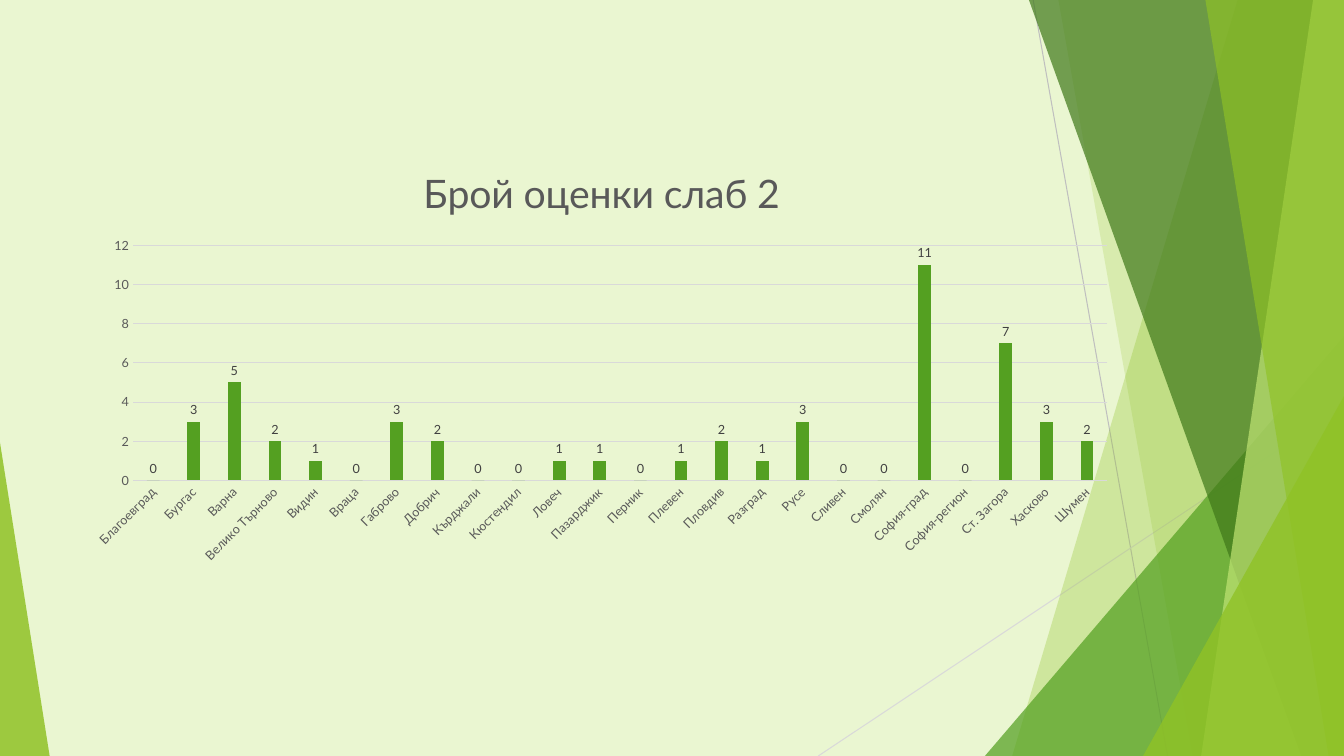
from dataclasses import dataclass

from lxml.etree import SubElement
from pptx import Presentation
from pptx.chart.data import CategoryChartData
from pptx.chart.chart import Chart
from pptx.dml.color import RGBColor
from pptx.enum.chart import XL_CHART_TYPE, XL_LABEL_POSITION, XL_TICK_MARK
from pptx.enum.shapes import MSO_CONNECTOR, MSO_SHAPE
from pptx.oxml.ns import qn
from pptx.shapes.autoshape import Shape
from pptx.slide import Slide
from pptx.text.text import Font
from pptx.util import Pt

WIDTH, HEIGHT = 960, 540


@dataclass(frozen=True)
class Theme:
    back: str = "EAF6D1"
    lime: str = "90C226"
    green: str = "54A021"
    forest: str = "3F7819"
    pale: str = "C0E474"
    rule: str = "BFBFBF"
    grid: str = "D9D9D9"
    text: str = "595959"
    label: str = "404040"
    face: str = "Lato"
    title: float = 28
    base: float = 10
    small: float = 9
    hair: float = 0.75


THEME = Theme()


@dataclass(frozen=True)
class Rule:
    start: tuple[float, float]
    end: tuple[float, float]
    color: str


@dataclass(frozen=True)
class Veil:
    """A band from a slanted left edge to the right side of the slide."""
    top: float
    foot: float
    color: str
    alpha: int


@dataclass(frozen=True)
class Wedge:
    """A right triangle standing on the foot of the slide."""
    left: float
    width: float
    height: float
    peak: float
    color: str
    alpha: int


RULES = [
    Rule((738, 0), (834, HEIGHT), THEME.rule),
    Rule((WIDTH, 290), (584.5, HEIGHT), THEME.grid),
]

PANES = [
    Veil(884, 723, THEME.lime, 30),
    Veil(756, 852, THEME.lime, 20),
    Wedge(703.5, 256.5, 300, 1, THEME.green, 72),
    Veil(735, 929.5, THEME.forest, 70),
    Veil(938, 858, THEME.pale, 70),
    Veil(861, 949, THEME.lime, 65),
    Wedge(816.5, 143.5, 257, 1, THEME.lime, 80),
    Wedge(0, 35.5, 224, 0, THEME.lime, 85),
]

GRADES = {
    "Благоевград": 0, "Бургас": 3, "Варна": 5, "Велико Търново": 2,
    "Видин": 1, "Враца": 0, "Габрово": 3, "Добрич": 2,
    "Кърджали": 0, "Кюстендил": 0, "Ловеч": 1, "Пазарджик": 1,
    "Перник": 0, "Плевен": 1, "Пловдив": 2, "Разград": 1,
    "Русе": 3, "Сливен": 0, "Смолян": 0, "София-град": 11,
    "София-регион": 0, "Ст. Загора": 7, "Хасково": 3, "Шумен": 2,
}


def rgb(code: str) -> RGBColor:
    return RGBColor.from_string(code)


def set_font(font: Font, size: float, color: str) -> None:
    font.name = THEME.face
    font.size = Pt(size)
    font.bold = False
    font.color.rgb = rgb(color)


def draw_rule(slide: Slide, rule: Rule) -> None:
    ends = [Pt(n) for n in (*rule.start, *rule.end)]
    line = slide.shapes.add_connector(MSO_CONNECTOR.STRAIGHT, *ends)
    line.line.color.rgb = rgb(rule.color)
    line.line.width = Pt(THEME.hair)
    SubElement(line._element.spPr, qn("a:effectLst"))


def draw_veil(slide: Slide, veil: Veil) -> Shape:
    pen = slide.shapes.build_freeform(Pt(veil.top), 0)
    rest = [(WIDTH, 0), (WIDTH, HEIGHT), (veil.foot, HEIGHT)]
    pen.add_line_segments([(Pt(x), Pt(y)) for x, y in rest], close=True)
    return pen.convert_to_shape()


def draw_wedge(slide: Slide, wedge: Wedge) -> Shape:
    shape = slide.shapes.add_shape(
        MSO_SHAPE.ISOSCELES_TRIANGLE, Pt(wedge.left),
        Pt(HEIGHT - wedge.height), Pt(wedge.width), Pt(wedge.height))
    shape.adjustments[0] = wedge.peak
    return shape


def draw_pane(slide: Slide, pane: Veil | Wedge) -> None:
    if isinstance(pane, Veil):
        shape = draw_veil(slide, pane)
    else:
        shape = draw_wedge(slide, pane)
    shape.shadow.inherit = False
    shape.line.fill.background()
    shape.fill.solid()
    shape.fill.fore_color.rgb = rgb(pane.color)
    tint = shape._element.spPr.find(f"{qn('a:solidFill')}/{qn('a:srgbClr')}")
    SubElement(tint, qn("a:alpha"), val=str(pane.alpha * 1000))


def style_axes(chart: Chart) -> None:
    names, scale = chart.category_axis, chart.value_axis
    for axis in (names, scale):
        axis.major_tick_mark = XL_TICK_MARK.NONE
        axis.minor_tick_mark = XL_TICK_MARK.NONE
        set_font(axis.tick_labels.font, THEME.small, THEME.text)
    names._element.txPr.bodyPr.set("rot", str(-45 * 60000))
    scale.minimum_scale, scale.maximum_scale, scale.major_unit = 0, 12, 2
    scale.has_major_gridlines = True
    scale.format.line.fill.background()
    for line in (names.format.line, scale.major_gridlines.format.line):
        line.color.rgb = rgb(THEME.grid)
        line.width = Pt(THEME.hair)


def style_bars(chart: Chart) -> None:
    plot = chart.plots[0]
    plot.gap_width, plot.overlap = 219, -27
    plot.vary_by_categories = False
    bars = plot.series[0]
    bars.invert_if_negative = False
    bars.format.fill.solid()
    bars.format.fill.fore_color.rgb = rgb(THEME.green)
    labels = bars.data_labels
    labels.show_value = True
    labels.position = XL_LABEL_POSITION.OUTSIDE_END
    set_font(labels.font, THEME.small, THEME.label)


def draw_chart(slide: Slide) -> None:
    data = CategoryChartData()
    data.categories = list(GRADES)
    data.add_series("Брой оценки слаб 2", list(GRADES.values()))
    box = [Pt(n) for n in (53.5, 103, 752.5, 305.5)]
    chart = slide.shapes.add_chart(
        XL_CHART_TYPE.COLUMN_CLUSTERED, *box, data).chart
    set_font(chart.font, THEME.base, THEME.text)
    chart.has_legend = False
    chart.has_title = True
    run = chart.chart_title.text_frame.paragraphs[0].add_run()
    run.text = "Брой оценки слаб 2"
    set_font(run.font, THEME.title, THEME.text)
    chart.chart_title.include_in_layout = False
    style_axes(chart)
    style_bars(chart)


def main() -> None:
    deck = Presentation()
    deck.slide_width, deck.slide_height = Pt(WIDTH), Pt(HEIGHT)
    slide = deck.slides.add_slide(deck.slide_layouts[6])
    slide.background.fill.solid()
    slide.background.fill.fore_color.rgb = rgb(THEME.back)
    for rule in RULES:
        draw_rule(slide, rule)
    for pane in PANES:
        draw_pane(slide, pane)
    draw_chart(slide)
    deck.save("out.pptx")


if __name__ == "__main__":
    main()
